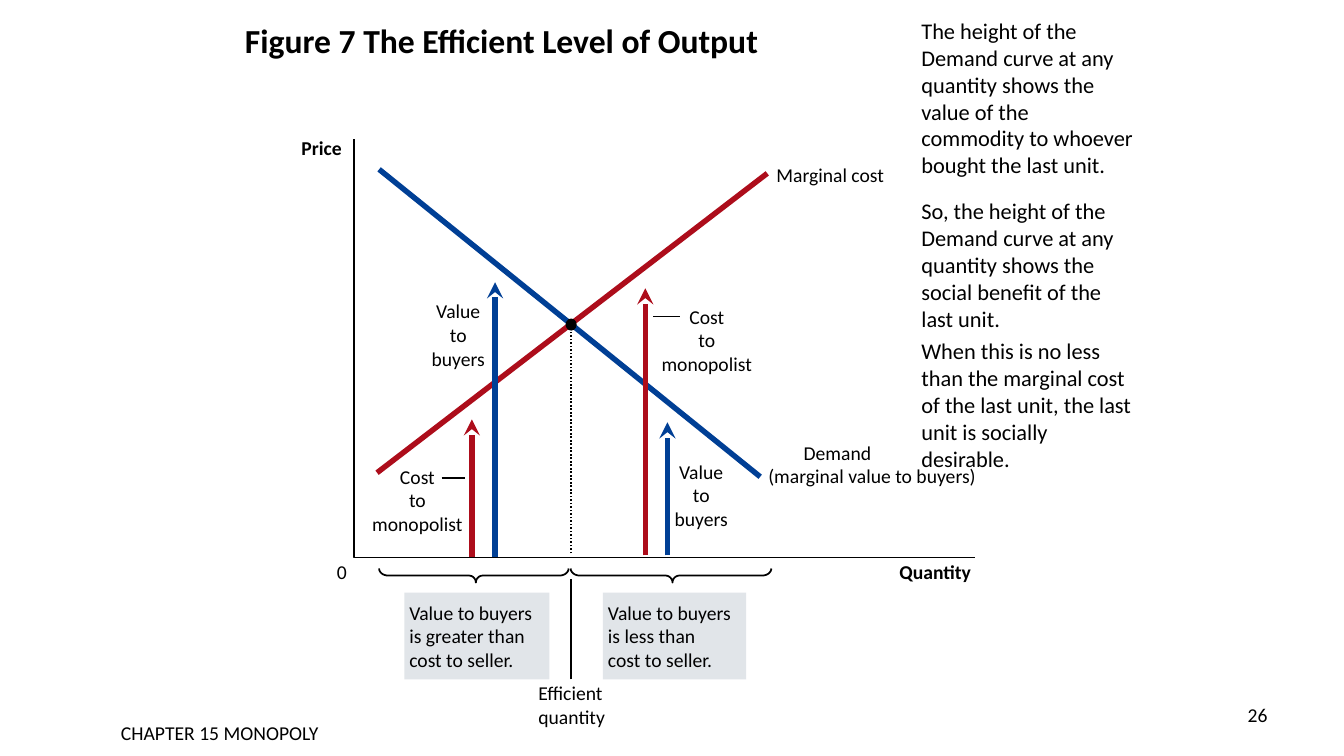
from math import cos, pi, sin

from lxml.etree import SubElement
from pptx import Presentation
from pptx.dml.color import RGBColor
from pptx.enum.dml import MSO_LINE
from pptx.enum.shapes import MSO_CONNECTOR, MSO_SHAPE
from pptx.enum.text import MSO_ANCHOR, PP_ALIGN
from pptx.oxml.ns import qn
from pptx.util import Inches, Pt

BLACK, BLUE, RED, GREY = "000000", "003F95", "AD0D1B", "E1E5E9"
THIN, THICK = 1.25, 3.88
CENTER, RIGHT = PP_ALIGN.CENTER, PP_ALIGN.RIGHT


def color(hex_code):
    return RGBColor.from_string(hex_code)


def write(frame, text, size=14, bold=False, align=PP_ALIGN.LEFT, spacing=None,
          margins=(0, 0, 0, 0), wrap=False, anchor=MSO_ANCHOR.TOP):
    """Fill a text frame, one paragraph per line; margins are left, top, right, bottom."""
    frame.word_wrap, frame.vertical_anchor = wrap, anchor
    (frame.margin_left, frame.margin_top,
     frame.margin_right, frame.margin_bottom) = map(Inches, margins)
    for index, line in enumerate(text.split("\n")):
        para = frame.add_paragraph() if index else frame.paragraphs[0]
        para.alignment, para.line_spacing = align, spacing
        span = para.add_run()
        span.text = line
        span.font.name, span.font.size, span.font.bold = "Calibri", Pt(size), bold
        span.font.color.rgb = color(BLACK)


def brace_half(edge, tip, top, side):
    """Points from the outer end of a brace to its tip; side is 1 for left, -1 for right."""
    depth, corner, steps = 0.07, 0.09, 8
    angles = [pi / 2 * step / steps for step in range(steps + 1)]
    outer = [(edge + side * corner * (1 - cos(a)), top + depth * sin(a)) for a in angles]
    inner = [(tip - side * depth * (1 - sin(a)), top + depth * (2 - cos(a))) for a in angles]
    return outer + inner


class FigureSlide:
    padding = (0.1, 0.05, 0.1, 0.05)

    def __init__(self, deck):
        self.page = deck.slides.add_slide(deck.slide_layouts[5])
        self.shapes = self.page.shapes

    def title(self, text, *place):
        title = self.shapes.title
        title.left, title.top, title.width, title.height = map(Inches, place)
        write(title.text_frame, text, size=24, bold=True, spacing=0.8,
              margins=self.padding, wrap=True, anchor=MSO_ANCHOR.MIDDLE)

    def label(self, text, left, top, width, **style):
        height = 0.24 * (text.count("\n") + 1)
        box = self.shapes.add_textbox(*map(Inches, (left, top, width, height)))
        write(box.text_frame, text, **style)

    def textbox(self, text, *place, **style):
        box = self.shapes.add_textbox(*map(Inches, place))
        write(box.text_frame, text, margins=self.padding, wrap=True, **style)

    def block(self, kind, fill, *place):
        shape = self.shapes.add_shape(kind, *map(Inches, place))
        shape.shadow.inherit = False
        shape.fill.solid()
        shape.fill.fore_color.rgb = color(fill)
        shape.line.fill.background()
        return shape

    def note(self, text, *place):
        panel = self.block(MSO_SHAPE.RECTANGLE, GREY, *place)
        write(panel.text_frame, text, margins=(0.05, 0.08, 0, 0))

    def line(self, start, end, hex_code=BLACK, width=THIN, arrow=False, dash=None):
        connector = self.shapes.add_connector(
            MSO_CONNECTOR.STRAIGHT, *map(Inches, (*start, *end)))
        connector.line.color.rgb = color(hex_code)
        connector.line.width = Pt(width)
        if dash:
            connector.line.dash_style = dash
        if arrow:
            SubElement(connector.line._get_or_add_ln(), qn("a:tailEnd"), type="stealth")
        SubElement(connector._element.spPr, qn("a:effectLst"))

    def outline(self, points):
        corners = [(Inches(x), Inches(y)) for x, y in points]
        builder = self.shapes.build_freeform(*corners[0])
        builder.add_line_segments(corners[1:], close=False)
        shape = builder.convert_to_shape()
        shape.shadow.inherit = False
        shape.fill.background()
        shape.line.color.rgb = color(BLACK)
        shape.line.width = Pt(THIN)

    def brace(self, left, tip, right, top=5.64):
        self.outline(brace_half(left, tip, top, 1) + brace_half(right, tip, top, -1)[::-1])


def main():
    deck = Presentation()
    deck.slide_width, deck.slide_height = Inches(13.33), Inches(7.5)
    figure = FigureSlide(deck)
    figure.title("Figure 7 The Efficient Level of Output", 2.33, 0.06, 9, 0.75)

    # Axes
    figure.outline([(3.51, 1.38), (3.51, 5.53), (9.67, 5.53)])
    figure.label("Quantity", 8.92, 5.55, 0.75, bold=True)
    figure.label("0", 3.34, 5.56, 0.12)
    figure.label("Price", 2.99, 1.35, 0.48, bold=True)

    # Curves
    figure.line((3.76, 1.68), (7.54, 4.73), BLUE, THICK)
    figure.label("Demand", 7.97, 4.37, 0.72)
    figure.label("(marginal value to buyers)", 7.62, 4.6, 2.12)
    figure.line((7.61, 1.72), (3.74, 4.69), RED, THICK)
    figure.label("Marginal cost", 7.7, 1.62, 1.12)

    # Ranges below and above the efficient quantity
    figure.brace(3.76, 4.72, 5.64)
    figure.note("Value to buyers\nis greater than\ncost to seller.", 4.01, 5.88, 1.44, 0.86)
    figure.brace(5.66, 6.67, 7.65)
    figure.note("Value to buyers\nis less than\ncost to seller.", 5.98, 5.88, 1.42, 0.86)

    # Cost and value arrows
    cost, value = "Cost\nto\nmonopolist", "Value\nto\nbuyers"
    for hex_code, start, end, text, left, top, width in (
        (RED, (4.68, 5.53), (4.68, 4.16), cost, 3.68, 4.61, 0.92),
        (RED, (6.4, 5.51), (6.4, 2.86), cost, 6.55, 3.02, 0.92),
        (BLUE, (4.91, 5.53), (4.91, 2.8), value, 4.27, 2.97, 0.55),
        (BLUE, (6.62, 5.51), (6.62, 4.19), value, 6.68, 4.56, 0.55),
    ):
        figure.line(start, end, hex_code, THICK, arrow=True)
        figure.label(text, left, top, width, align=CENTER)
    figure.line((4.38, 4.74), (4.61, 4.74))
    figure.line((6.48, 3.14), (6.74, 3.14))

    # Efficient quantity
    figure.line((5.66, 5.49), (5.66, 3.21), dash=MSO_LINE.ROUND_DOT)
    figure.block(MSO_SHAPE.OVAL, BLACK, 5.61, 3.16, 0.11, 0.12)
    figure.line((5.66, 6.74), (5.66, 5.74))
    figure.label("Efficient\nquantity", 5.34, 6.76, 0.7)

    # Footer and explanation
    figure.textbox("26", 11.86, 6.92, 0.81, 0.52, align=RIGHT)
    figure.textbox("CHAPTER 15 MONOPOLY", 0.32, 7.1, 3.72, 0.33, align=CENTER)
    for text, top, height in (
        ("The height of the Demand curve at any quantity shows the value of the "
         "commodity to whoever bought the last unit.", 0.12, 1.72),
        ("So, the height of the Demand curve at any quantity shows the social "
         "benefit of the last unit.", 1.91, 1.45),
        ("When this is no less than the marginal cost of the last unit, the last "
         "unit is socially desirable.", 3.3, 1.45),
    ):
        figure.textbox(text, 9.04, top, 2.31, height, size=16)

    deck.save("out.pptx")


if __name__ == "__main__":
    main()
